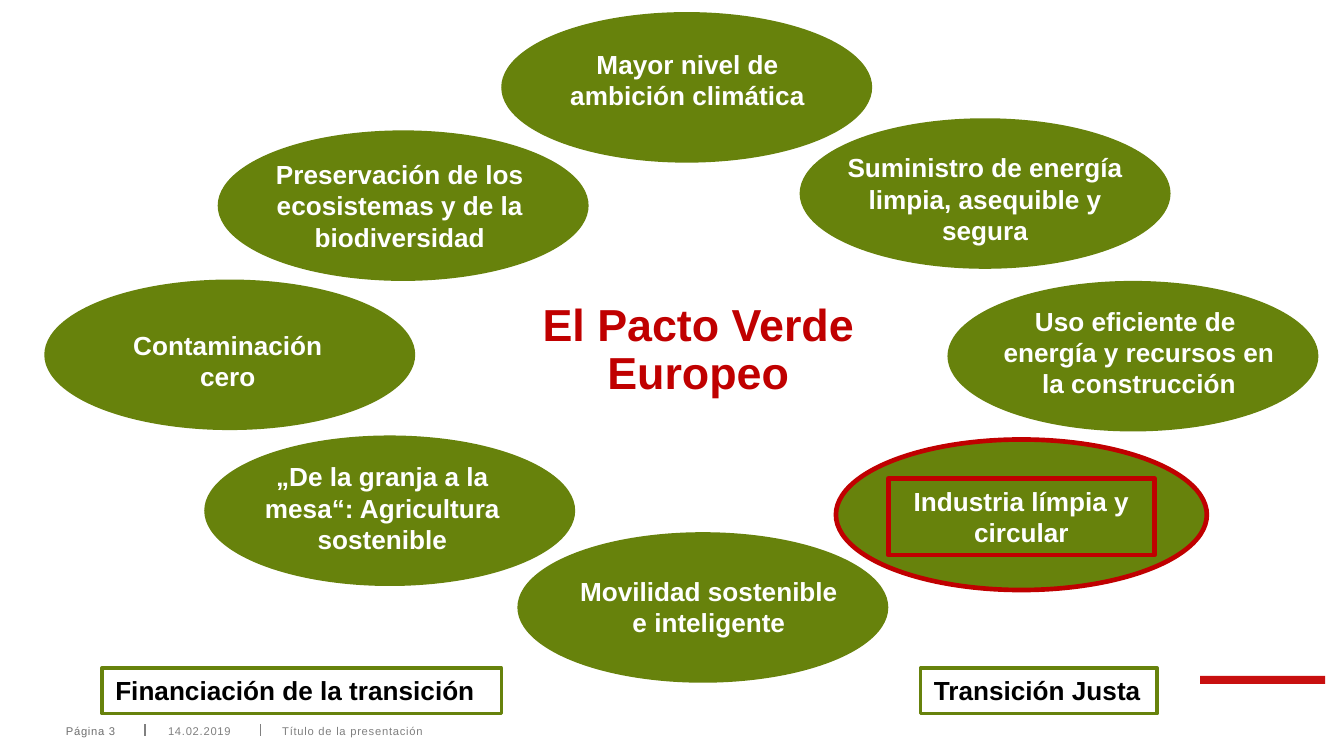
"""Build the slide on the eight areas of the European Green Deal."""
from lxml import etree
from pptx import Presentation
from pptx.dml.color import RGBColor
from pptx.enum import shapes, text
from pptx.oxml import ns
from pptx.util import Inches, Pt

COLORS = {
    "green": "67820C", "red": "C00000", "accent": "C80F0F", "white": "FFFFFF",
    "black": "000000", "grey": "808080", "dark_grey": "6F6F6F",
}
OVAL_W, OVAL_H = 2.76, 1.12
AREAS = [
    ((3.73, 0.09), (3.92, 0.31, 2.39, 0.57), "Mayor nivel de ambición climática"),
    ((5.95, 0.88), (6.16, 1.08, 2.34, 0.81),
     "Suministro de energía limpia, asequible y segura"),
    ((7.05, 2.09), (7.24, 2.22, 2.47, 0.81),
     "Uso eficiente de \nenergía y recursos en\nla construcción"),
    ((6.22, 3.27), (6.61, 3.56, 1.98, 0.57), "Industria límpia y circular"),
    ((3.85, 3.96), (4.14, 4.23, 2.27, 0.57), "Movilidad sostenible e inteligente"),
    ((1.52, 3.24), (1.74, 3.38, 2.21, 0.81),
     "„De la granja a la mesa“: Agricultura sostenible"),
    ((0.33, 2.08), (0.72, 2.4, 1.95, 0.57), "Contaminación cero"),
    ((1.62, 0.97), (1.94, 1.13, 2.07, 0.81),
     "Preservación de los ecosistemas y de la biodiversidad"),
]
HIGHLIGHTED = "Industria límpia y circular"
FOOTER = [
    (1.25, 0.58, "14.02.2019", "grey"),
    (2.1, 6.24, "Título de la presentación", "grey"),
    (0.49, 0.61, "Página 3", "dark_grey"),
]


def rgb(name):
    """Return the named colour."""
    return RGBColor.from_string(COLORS[name])


def write(sp, words, size, color, bold=True, align=text.PP_ALIGN.CENTER):
    """Fill a shape with wrapped, formatted text."""
    tf = sp.text_frame
    tf.word_wrap = True
    tf.text = words
    for p in tf.paragraphs:
        p.alignment = align
        for r in p.runs:
            r.font.name = "Arial"
            r.font.size = Pt(size)
            r.font.bold = bold
            r.font.color.rgb = rgb(color)
    return tf


def add_shape(parent, kind, box, fill=None, line=None, width=2.5):
    """Add a flat preset shape with optional fill and outline."""
    sp = parent.add_shape(kind, *map(Inches, box))
    sp.shadow.inherit = False
    if fill:
        sp.fill.solid()
        sp.fill.fore_color.rgb = rgb(fill)
    else:
        sp.fill.background()
    if line:
        sp.line.color.rgb = rgb(line)
        sp.line.width = Pt(width)
    else:
        sp.line.fill.background()
    return sp


def add_area(s, corner, box, words):
    """Add one policy area as a grouped oval and label."""
    group = s.shapes.add_group_shape().shapes
    line = "red" if words == HIGHLIGHTED else None
    oval = (*corner, OVAL_W, OVAL_H)
    add_shape(group, shapes.MSO_SHAPE.OVAL, oval, "green", line)
    if line:
        label = add_shape(group, shapes.MSO_SHAPE.RECTANGLE, box, line=line)
    else:
        label = group.add_textbox(*map(Inches, box))
    tf = write(label, words, 14, "white")
    tf.vertical_anchor = text.MSO_ANCHOR.TOP
    tf.auto_size = text.MSO_AUTO_SIZE.SHAPE_TO_FIT_TEXT


def add_frame(s, left, width, words, line_width):
    """Add a green-framed caption at the foot of the slide."""
    sp = add_shape(s.shapes, shapes.MSO_SHAPE.RECTANGLE,
                   (left, 4.97, width, 0.34), line="green", width=line_width)
    tf = write(sp, words, 14, "black", align=text.PP_ALIGN.LEFT)
    tf.vertical_anchor = text.MSO_ANCHOR.TOP
    tf.auto_size = text.MSO_AUTO_SIZE.SHAPE_TO_FIT_TEXT


def set_margins(tf, right=0):
    """Remove the insets of a text frame except the right one."""
    tf.margin_left = tf.margin_top = tf.margin_bottom = 0
    tf.margin_right = Inches(right)


def add_footer_text(s, left, width, words, color):
    """Add one letter-spaced footer entry."""
    sp = s.shapes.add_textbox(Inches(left), Inches(5.39), Inches(width), Inches(0.1))
    tf = write(sp, words, 6, color, bold=False, align=text.PP_ALIGN.LEFT)
    set_margins(tf)
    tf.vertical_anchor = text.MSO_ANCHOR.MIDDLE
    tf.auto_size = text.MSO_AUTO_SIZE.SHAPE_TO_FIT_TEXT
    tf.paragraphs[0].runs[0].font._element.set("spc", "40")


def add_divider(s, x):
    """Add a thin vertical line between footer entries."""
    line = s.shapes.add_connector(shapes.MSO_CONNECTOR.STRAIGHT, Inches(x),
                                  Inches(5.39), Inches(x), Inches(5.48))
    line.line.color.rgb = rgb("grey")
    line.line.width = Pt(0.75)
    etree.SubElement(line._element.spPr, ns.qn("a:effectLst"))


def set_title(s, words):
    """Place and format the title placeholder."""
    sp = s.shapes.title
    sp.left, sp.top, sp.width, sp.height = map(Inches, (3.63, 2.67, 3.21, 0.3))
    tf = write(sp, words, 24, "red")
    set_margins(tf, right=0.08)
    tf.vertical_anchor = text.MSO_ANCHOR.BOTTOM
    tf.auto_size = text.MSO_AUTO_SIZE.NONE
    tf.paragraphs[0].line_spacing = 0.9


def main():
    """Build and save the presentation."""
    prs = Presentation()
    prs.slide_width = Inches(10)
    prs.slide_height = Inches(10 * 9 / 16)
    s = prs.slides.add_slide(prs.slide_layouts[5])
    set_title(s, "El Pacto Verde Europeo")
    add_shape(s.shapes, shapes.MSO_SHAPE.RECTANGLE, (8.93, 5.03, 0.93, 0.06), "accent")
    for x in (1.94, 1.08):
        add_divider(s, x)
    for entry in FOOTER:
        add_footer_text(s, *entry)
    for area in AREAS:
        add_area(s, *area)
    add_frame(s, 0.76, 2.97, "Financiación de la transición", 1.75)
    add_frame(s, 6.85, 1.76, "Transición Justa", 2)
    prs.save("out.pptx")


if __name__ == "__main__":
    main()
